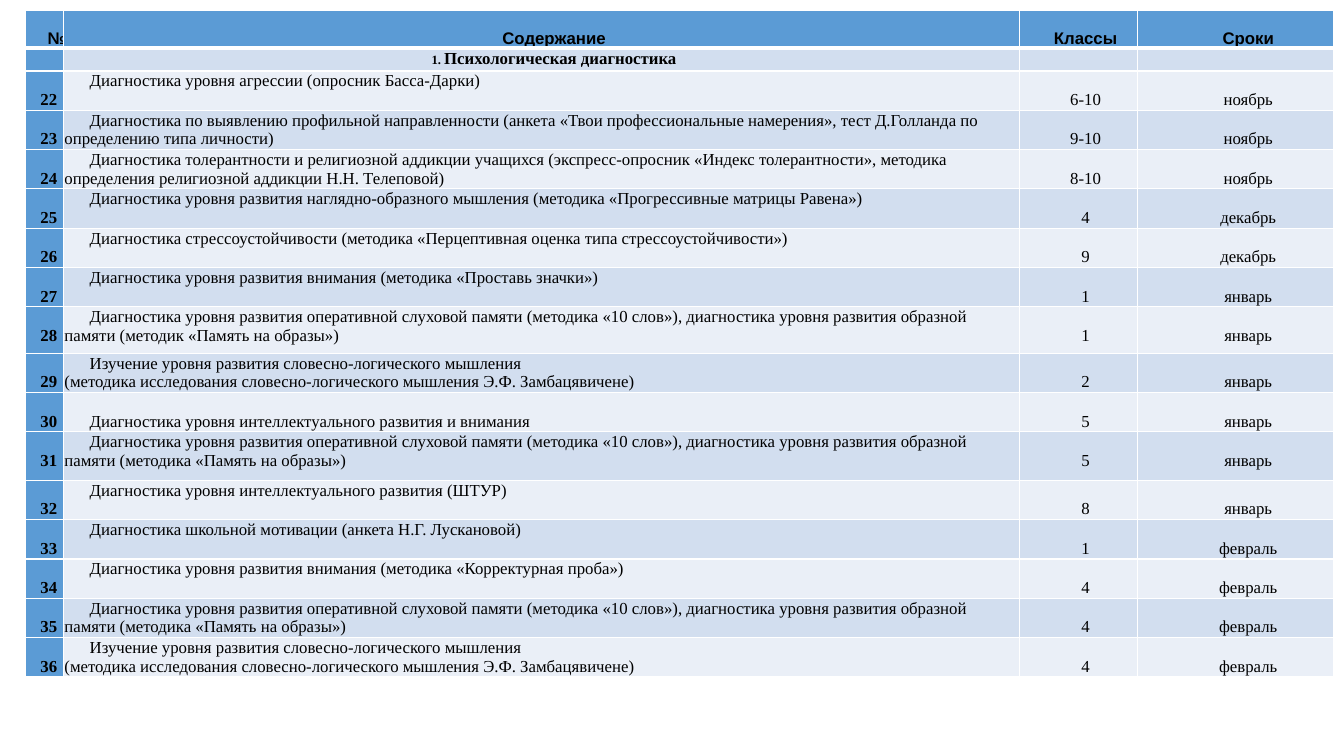
from lxml.etree import SubElement
from pptx import Presentation
from pptx.dml.color import RGBColor
from pptx.enum.text import MSO_ANCHOR, PP_ALIGN
from pptx.oxml import parse_xml
from pptx.oxml.ns import qn
from pptx.util import Inches, Pt

COLORS = {"header": "5B9BD5", "band": "D2DEEF", "light": "EAEFF7",
          "border": "FFFFFF", "text": "000000"}
SERIF = "Times New Roman"
COLUMN_WIDTHS = [0.38, 9.49, 1.17, 1.95]
ROW_INDENTS = [0.09, 0.25, 0.14, 0.25]
HEADINGS = ["№", "Содержание", "Классы", "Сроки"]
HEADING_INDENTS = [0.25, 0.25, 0.14, 0.25]
HEADING_HEIGHT, SECTION_HEIGHT = 0.12, 0.23
FIRST_NUMBER = 22

MEMORY = ("Диагностика уровня развития оперативной слуховой памяти (методика «10 слов»), "
          "диагностика уровня развития образной памяти ({} «Память на образы»)")
LOGIC = ("Изучение уровня развития словесно-логического мышления\n"
         "(методика исследования словесно-логического мышления Э.Ф. Замбацявичене)")
INTELLECT = "Диагностика уровня интеллектуального развития и внимания"
ACTIVITIES = [
    (0.32, "Диагностика уровня агрессии (опросник Басса-Дарки)", "6-10", "ноябрь"),
    (0.23, "Диагностика по выявлению профильной направленности (анкета «Твои профессиональные "
           "намерения», тест Д.Голланда по определению типа личности)", "9-10", "ноябрь"),
    (0.33, "Диагностика толерантности и религиозной аддикции учащихся (экспресс-опросник «Индекс "
           "толерантности», методика определения религиозной аддикции Н.Н. Телеповой)",
     "8-10", "ноябрь"),
    (0.25, "Диагностика уровня развития наглядно-образного мышления "
           "(методика «Прогрессивные матрицы Равена»)", "4", "декабрь"),
    (0.23, "Диагностика стрессоустойчивости "
           "(методика «Перцептивная оценка типа стрессоустойчивости»)", "9", "декабрь"),
    (0.23, "Диагностика уровня развития внимания (методика «Проставь значки»)", "1", "январь"),
    (0.46, MEMORY.format("методик"), "1", "январь"),
    (0.23, LOGIC, "2", "январь"),
    (0.23, INTELLECT, "5", "январь"),
    (0.48, MEMORY.format("методика"), "5", "январь"),
    (0.27, "Диагностика уровня интеллектуального развития (ШТУР)", "8", "январь"),
    (0.3, "Диагностика школьной мотивации (анкета Н.Г. Лускановой)", "1", "февраль"),
    (0.29, "Диагностика уровня развития внимания (методика «Корректурная проба»)",
     "4", "февраль"),
    (0.23, MEMORY.format("методика"), "4", "февраль"),
    (0.23, LOGIC, "4", "февраль"),
]


def paint_cell(cell, fill, margin, top=1, bottom=1):
    cell.margin_left = cell.margin_right = Inches(margin)
    cell.margin_top = cell.margin_bottom = Inches(margin)
    cell.fill.solid()
    cell.fill.fore_color.rgb = RGBColor.from_string(COLORS[fill])
    properties = cell._tc.get_or_add_tcPr()
    for place, (side, points) in enumerate(
            [("L", 1), ("R", 1), ("T", top), ("B", bottom)]):
        properties.insert(place, parse_xml(
            f'<a:ln{side} xmlns:a="http://schemas.openxmlformats.org/drawingml/2006/main" '
            f'w="{Pt(points)}"><a:solidFill><a:srgbClr val="{COLORS["border"]}"/>'
            f'</a:solidFill></a:ln{side}>'))


def format_run(run, font=SERIF, size=12, bold=False):
    run.font.name = font
    run.font.size = Pt(size)
    run.font.bold = bold
    run.font.color.rgb = RGBColor.from_string(COLORS["text"])


def write_cell(cell, text, indent, spacing=2, centred=True, font=SERIF, bold=False):
    paragraph = cell.text_frame.paragraphs[0]
    paragraph.text = text
    paragraph.alignment = PP_ALIGN.CENTER if centred else PP_ALIGN.LEFT
    paragraph.line_spacing = float(spacing)
    paragraph._p.get_or_add_pPr().set("indent", str(Inches(indent)))
    for run in paragraph.runs:
        format_run(run, font, bold=bold)
    return paragraph


def fill_heading(cells):
    for cell, heading, indent in zip(cells, HEADINGS, HEADING_INDENTS):
        paint_cell(cell, "header", 0, bottom=3)
        write_cell(cell, heading, indent, font="Arial", bold=True)


def fill_section(cells):
    for column, cell in enumerate(cells):
        paint_cell(cell, "band" if column else "header", 0, top=3)
        if column != 1:
            SubElement(cell.text_frame.paragraphs[0]._p, qn("a:endParaRPr"), sz="900")
    title = write_cell(cells[1], "1. ", 0.25, spacing=1, bold=True)
    format_run(title.runs[0], size=9, bold=True)
    name = title.add_run()
    name.text = "Психологическая диагностика"
    format_run(name, bold=True)
    cells[1].vertical_anchor = MSO_ANCHOR.MIDDLE


def fill_activity(cells, index, activity, grades, month):
    band = "band" if index % 2 else "light"
    texts = [str(FIRST_NUMBER + index), activity, grades, month]
    for column, (cell, text, indent) in enumerate(zip(cells, texts, ROW_INDENTS)):
        paint_cell(cell, band if column else "header", 0.01)
        spacing = 1 if column == 1 and text != INTELLECT else 2
        write_cell(cell, text, indent, spacing, centred=column != 1, bold=column == 0)


def add_plan(slide, left, top, width, height):
    heights = [HEADING_HEIGHT, SECTION_HEIGHT] + [activity[0] for activity in ACTIVITIES]
    plan = slide.shapes.add_table(len(heights), len(COLUMN_WIDTHS), Inches(left),
                                  Inches(top), Inches(width), Inches(height)).table
    for column, share in zip(plan.columns, COLUMN_WIDTHS):
        column.width = Inches(width * share / sum(COLUMN_WIDTHS))
    for row, row_height in zip(plan.rows, heights):
        row.height = Inches(row_height)
    heading, section, *activity_rows = [list(row.cells) for row in plan.rows]
    fill_heading(heading)
    fill_section(section)
    for index, (cells, activity) in enumerate(zip(activity_rows, ACTIVITIES)):
        fill_activity(cells, index, *activity[1:])


def main():
    deck = Presentation()
    deck.slide_width, deck.slide_height = Inches(13.33), Inches(7.5)
    slide = deck.slides.add_slide(deck.slide_layouts[6])
    add_plan(slide, 0.25, 0.1, 12.98, 7.15)
    deck.save("out.pptx")


if __name__ == "__main__":
    main()
